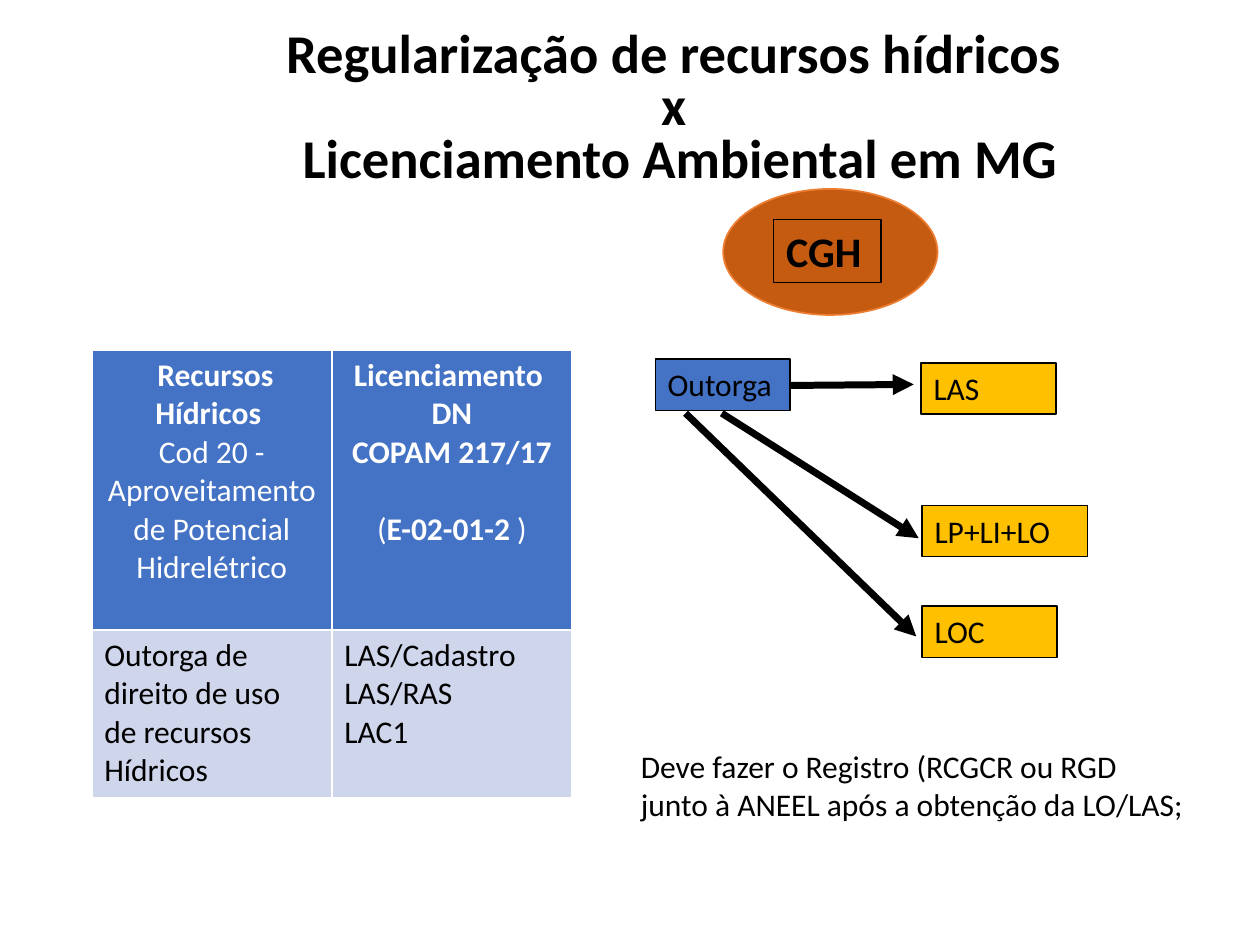
from lxml import etree
from pptx import Presentation
from pptx.dml.color import RGBColor
from pptx.enum import shapes, text
from pptx.oxml import ns
from pptx.util import Cm, Pt

FONT = "Calibri"
BLACK = RGBColor(0x00, 0x00, 0x00)
WHITE = RGBColor(0xFF, 0xFF, 0xFF)
BLUE = RGBColor(0x44, 0x72, 0xC4)
PALE_BLUE = RGBColor(0xCF, 0xD5, 0xEA)
AMBER = RGBColor(0xFF, 0xC0, 0x00)
RUST = RGBColor(0xC5, 0x5A, 0x11)
ORANGE = RGBColor(0xED, 0x7D, 0x31)


def style(para, size=18, color=BLACK, bold=False, align=text.PP_ALIGN.LEFT):
    para.alignment = align
    para.font.name = FONT
    para.font.size = Pt(size)
    para.font.bold = bold
    para.font.color.rgb = color


def place(shape, left, top, width, height):
    shape.left, shape.top = Cm(left), Cm(top)
    shape.width, shape.height = Cm(width), Cm(height)


def add_title(page, lines):
    title = page.shapes.title
    place(title, 1.68, 0.38, 24.05, 3.68)
    frame = title.text_frame
    frame.text = "\n".join(lines)
    frame.auto_size = text.MSO_AUTO_SIZE.NONE
    frame.vertical_anchor = text.MSO_ANCHOR.MIDDLE
    for para in frame.paragraphs:
        style(para, 31.2, bold=True, align=text.PP_ALIGN.CENTER)
        para.line_spacing = 0.8


def add_filled(page, kind, bounds, fill, line, line_width):
    shape = page.shapes.add_shape(kind, *map(Cm, bounds))
    shape.shadow.inherit = False
    shape.fill.solid()
    shape.fill.fore_color.rgb = fill
    shape.line.color.rgb = line
    shape.line.width = Pt(line_width)
    return shape


def add_label(page, words, bounds, fill, size=18, bold=False):
    box = add_filled(page, shapes.MSO_SHAPE.RECTANGLE, bounds, fill, BLACK, 0.75)
    frame = box.text_frame
    frame.text = words
    frame.word_wrap = True
    frame.auto_size = text.MSO_AUTO_SIZE.SHAPE_TO_FIT_TEXT
    frame.vertical_anchor = text.MSO_ANCHOR.TOP
    style(frame.paragraphs[0], size, bold=bold)


def add_arrow(page, *ends):
    arrow = page.shapes.add_connector(
        shapes.MSO_CONNECTOR.STRAIGHT, *map(Cm, ends))
    arrow.line.color.rgb = BLACK
    arrow.line.width = Pt(4)
    etree.SubElement(arrow.line._get_or_add_ln(), ns.qn("a:tailEnd"), type="triangle")
    etree.SubElement(arrow._element.spPr, ns.qn("a:effectLst"))


def add_note(page, words):
    box = page.shapes.add_textbox(Cm(12.67), Cm(14.94), Cm(11.58), Cm(1.8))
    box.text_frame.word_wrap = True
    box.text_frame.text = words
    style(box.text_frame.paragraphs[0])


def fill_cell(cell, words, fill):
    cell.text = words
    cell.fill.solid()
    cell.fill.fore_color.rgb = fill
    return cell.text_frame.paragraphs


def add_table(page):
    table = page.shapes.add_table(
        2, 2, Cm(1.85), Cm(7.06), Cm(9.68), Cm(9.02)).table
    for column in table.columns:
        column.width = Cm(4.84)
    for row, height in zip(table.rows, (5.64, 3.38)):
        row.height = Cm(height)

    headers = (
        " Recursos Hídricos \nCod 20 - Aproveitamento de Potencial Hidrelétrico",
        "Licenciamento \vDN\vCOPAM 217/17\n",
    )
    for column, words in enumerate(headers):
        heading, detail = fill_cell(table.cell(0, column), words, BLUE)
        style(heading, color=WHITE, bold=True, align=text.PP_ALIGN.CENTER)
        style(detail, color=WHITE, align=text.PP_ALIGN.CENTER)
    detail.space_before = Pt(22)
    for words, bold in (("(", False), ("E-02-01-2 ", True), (")", False)):
        span = detail.add_run()
        span.text = words
        span.font.bold = bold

    entries = (
        "Outorga de direito de uso de recursos Hídricos",
        "LAS/Cadastro\nLAS/RAS\nLAC1",
    )
    for column, words in enumerate(entries):
        for para in fill_cell(table.cell(1, column), words, PALE_BLUE):
            style(para)


def main():
    deck = Presentation()
    deck.slide_width, deck.slide_height = Cm(25.4), Cm(19.05)
    page = deck.slides.add_slide(deck.slide_layouts[5])

    add_title(page, ("Regularização de recursos hídricos ", "x ",
                     "Licenciamento Ambiental em MG"))
    add_table(page)

    add_filled(page, shapes.MSO_SHAPE.OVAL, (14.58, 3.81, 4.32, 2.54),
               RUST, ORANGE, 1)
    add_label(page, "CGH", (15.6, 4.42, 2.16, 1.28), RUST, 24, True)

    add_label(page, "Outorga", (13.21, 7.24, 2.72, 1.03), BLUE)
    for words, left, top, width in (("LAS", 18.57, 7.32, 2.72),
                                    ("LP+LI+LO", 18.59, 10.19, 3.33),
                                    ("LOC", 18.59, 12.22, 2.72)):
        add_label(page, words, (left, top, width, 1.03), AMBER)

    add_arrow(page, 15.93, 7.77, 18.42, 7.75)
    add_arrow(page, 14.55, 8.33, 18.52, 10.85)
    add_arrow(page, 13.82, 8.33, 18.47, 12.83)

    add_note(page, "Deve fazer o Registro (RCGCR ou RGD junto à ANEEL "
                   "após a obtenção da LO/LAS;")
    deck.save("out.pptx")


if __name__ == "__main__":
    main()
